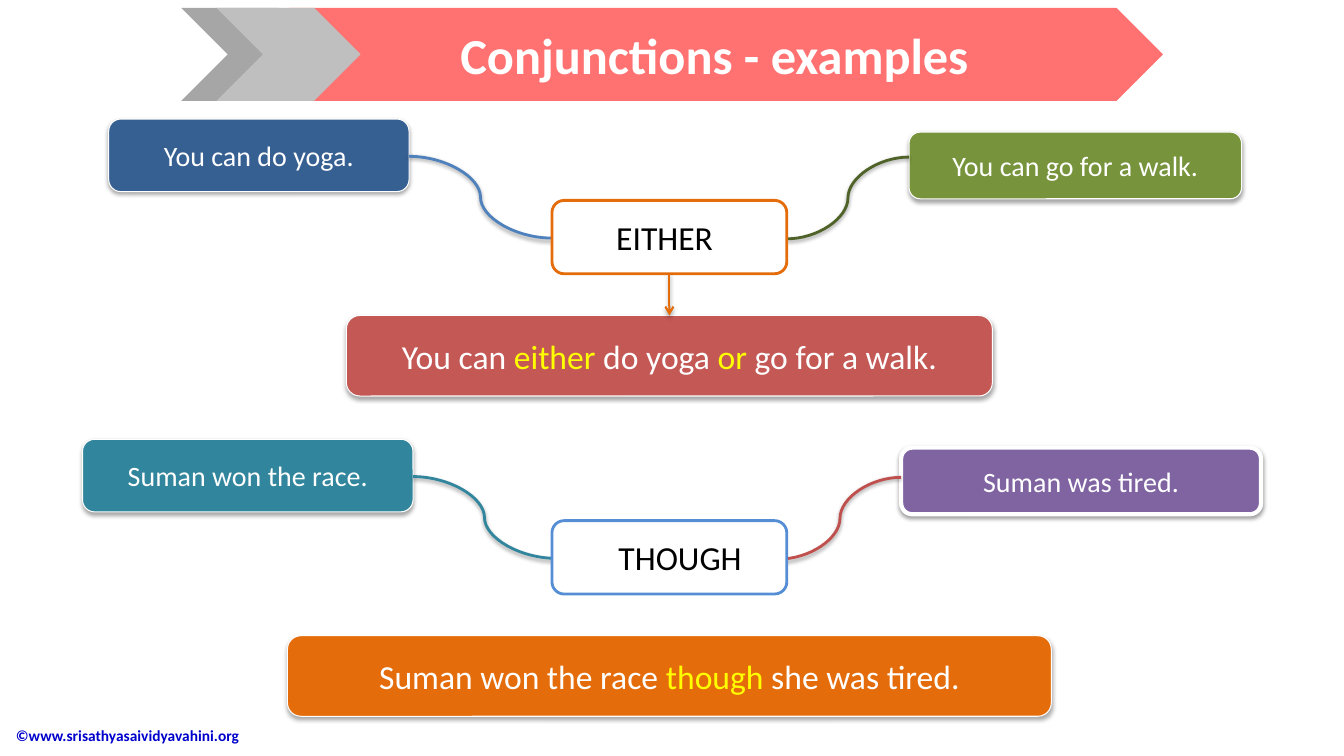
from dataclasses import dataclass

from lxml.etree import SubElement
from pptx import Presentation
from pptx.dml.color import RGBColor
from pptx.enum.shapes import MSO_CONNECTOR as Link, MSO_SHAPE as Preset
from pptx.enum.text import MSO_ANCHOR as Anchor, MSO_AUTO_SIZE as AutoSize, PP_ALIGN as Align
from pptx.oxml.ns import qn
from pptx.util import Cm, Pt


@dataclass(frozen=True)
class Theme:
    font: str = "Calibri"
    white: str = "FFFFFF"
    black: str = "000000"
    highlight: str = "FFFF00"
    banner: str = "FF7271"
    chevrons: tuple = ("A6A6A6", "BFBFBF")
    footer: str = "0000CC"
    title_size: int = 36
    large_size: int = 24
    clause_size: int = 20
    footer_size: int = 11
    soft_shadow: tuple = (1.8, 35)
    strong_shadow: tuple = (1.6, 38)


@dataclass(frozen=True)
class Clause:
    text: str
    left: float
    top: float
    width: float
    height: float
    fill: str
    curve: str
    tuck: float = 0
    outline: float = 0.75
    shadow: tuple = Theme.soft_shadow


@dataclass(frozen=True)
class Example:
    """A pair of clauses, the word that joins them and the joined sentence."""
    clauses: tuple
    hub: str
    hub_line: str
    hub_shift: float
    result: tuple
    result_width: float
    result_fill: str
    arrow: bool = False


THEME = Theme()
EITHER = Example(
    clauses=(Clause("You can do yoga.", 0.66, 0, 7.57, 1.83, "376092", "4F81BD"),
             Clause("You can go for a walk.", 20.83, 0.33, 8.38, 1.68, "77933C", "4F6228")),
    hub="EITHER", hub_line="E46C0A", hub_shift=-0.12,
    result=("You can ", "either ", "do yoga ", "or", " go for a walk."),
    result_width=16.28, result_fill="C35855", arrow=True)
THOUGH = Example(
    clauses=(Clause("Suman won the race.", 0, 0, 8.33, 1.83, "31859C", "31859C", tuck=0.1),
             Clause("Suman was tired.", 20.63, 0.21, 9.07, 1.68, "8064A2", "C0504D",
                    tuck=0.2, outline=3, shadow=THEME.strong_shadow)),
    hub="THOUGH", hub_line="558ED5", hub_shift=0.27,
    result=("Suman won the race ", "though", " she was tired."),
    result_width=19.25, result_fill="E46C0A")


def rgb(code):
    return RGBColor.from_string(code)


def format_span(span, size, color, bold=False):
    span.font.name = THEME.font
    span.font.size = Pt(size)
    span.font.bold = bold
    span.font.color.rgb = rgb(color)


def add_shadow(properties, shadow):
    """Put a downward blurred shadow, given as distance and opacity, on a part."""
    distance, opacity = shadow
    effects = properties.find(qn("a:effectLst"))
    if effects is None:
        effects = SubElement(properties, qn("a:effectLst"))
    outer = SubElement(effects, qn("a:outerShdw"), blurRad=str(Pt(3.1)),
                       dist=str(Pt(distance)), dir="5400000", rotWithShape="0")
    color = SubElement(outer, qn("a:srgbClr"), val=THEME.black)
    SubElement(color, qn("a:alpha"), val=str(opacity * 1000))


def add_plain_shape(page, preset, left, top, width, height, fill):
    shape = page.shapes.add_shape(preset, Cm(left), Cm(top), Cm(width), Cm(height))
    shape.shadow.inherit = False
    shape.fill.solid()
    shape.fill.fore_color.rgb = rgb(fill)
    shape.line.fill.background()
    return shape


def add_card(page, left, top, width, height, fill, line, outline, spans, size, color,
             shadow=None):
    """Draw a rounded box whose every second span is highlighted."""
    card = add_plain_shape(page, Preset.ROUNDED_RECTANGLE, left, top, width, height, fill)
    card.line.color.rgb = rgb(line)
    card.line.width = Pt(outline)
    if shadow:
        add_shadow(card._element.spPr, shadow)
    frame = card.text_frame
    frame.word_wrap = True
    frame.vertical_anchor = Anchor.MIDDLE
    para = frame.paragraphs[0]
    para.alignment = Align.CENTER
    for index, words in enumerate(spans):
        span = para.add_run()
        span.text = words
        format_span(span, size, THEME.highlight if index % 2 else color)
    return card


def add_link(page, kind, start, end, color, width, shadow):
    points = [Cm(value) for value in (*start, *end)]
    link = page.shapes.add_connector(kind, *points)
    link.line.color.rgb = rgb(color)
    link.line.width = Pt(width)
    add_shadow(link._element.spPr, shadow)
    return link


def draw_example(page, example, left, top, width):
    middle = left + width / 2
    hub_width, hub_height = 5.92, 1.85
    hub_left, hub_top = middle - hub_width / 2, top + 2.05
    for clause in example.clauses:
        clause_left = left + clause.left
        add_card(page, clause_left, top + clause.top, clause.width, clause.height, clause.fill,
                 THEME.white, clause.outline, [clause.text], THEME.clause_size, THEME.white,
                 clause.shadow)
        if clause_left < middle:
            start = clause_left + clause.width, top + 0.94
            end = hub_left + clause.tuck, top + 3
        else:
            start = hub_left + hub_width - clause.tuck, top + 3.02
            end = clause_left, top + 0.96
        add_link(page, Link.CURVE, start, end, clause.curve, 2, THEME.strong_shadow)

    result_top = top + 4.95
    result = add_card(page, middle - example.result_width / 2, result_top, example.result_width,
                      2.03, example.result_fill, THEME.white, 0.75, example.result,
                      THEME.large_size, THEME.white, THEME.soft_shadow)
    hub = add_card(page, hub_left, hub_top, hub_width, hub_height, THEME.white,
                   example.hub_line, 2, [example.hub], THEME.large_size, THEME.black)
    hub.text_frame.margin_left = Cm(0.25 + max(0, 2 * example.hub_shift))
    hub.text_frame.margin_right = Cm(0.25 + max(0, -2 * example.hub_shift))
    if example.arrow:
        arrow = add_link(page, Link.STRAIGHT, (middle, hub_top + hub_height),
                         (middle, result_top), example.hub_line, 1.5, THEME.soft_shadow)
        arrow.begin_connect(hub, 2)
        arrow.end_connect(result, 0)
        SubElement(arrow._element.spPr.find(qn("a:ln")), qn("a:tailEnd"), type="arrow")


def draw_banner(page, left, top, width, height):
    """Draw the title arrow with its two chevrons at the tail."""
    chevron_width = 3.63
    back, front = THEME.chevrons
    arrow_left = left + 2.72
    arrow_width = width - 2.72
    add_plain_shape(page, Preset.CHEVRON, left, top, chevron_width, height, back)
    add_plain_shape(page, Preset.PENTAGON, arrow_left, top, arrow_width, height, THEME.banner)
    add_plain_shape(page, Preset.CHEVRON, left + 0.89, top, chevron_width, height, front)

    title = page.shapes.title
    title.left, title.top = Cm(arrow_left), Cm(top)
    title.width, title.height = Cm(arrow_width - height / 4), Cm(height)
    frame = title.text_frame
    frame.text = "Conjunctions - examples"
    frame.auto_size = AutoSize.NONE
    frame.vertical_anchor = Anchor.MIDDLE
    para = frame.paragraphs[0]
    para.alignment = Align.CENTER
    format_span(para.runs[0], THEME.title_size, THEME.white, bold=True)
    page.shapes._spTree.append(title._element)  # the title lies on top of the arrow


def draw_footer(page, left, top, width, height):
    box = page.shapes.add_textbox(Cm(left), Cm(top), Cm(width), Cm(height))
    frame = box.text_frame
    frame.word_wrap = True
    frame.vertical_anchor = Anchor.MIDDLE
    frame.text = "©www.srisathyasaividyavahini.org"
    format_span(frame.paragraphs[0].runs[0], THEME.footer_size, THEME.footer, bold=True)


def main():
    deck = Presentation()
    deck.slide_width, deck.slide_height = Cm(33.87), Cm(19.05)
    page = deck.slides.add_slide(deck.slide_layouts[5])
    draw_footer(page, 0.15, 18.03, 8.96, 1)
    draw_example(page, EITHER, 2.08, 3, 29.58)
    draw_example(page, THOUGH, 2.08, 11.07, 29.58)
    draw_banner(page, 4.57, 0.2, 24.74, 2.34)
    deck.save("out.pptx")


if __name__ == "__main__":
    main()
